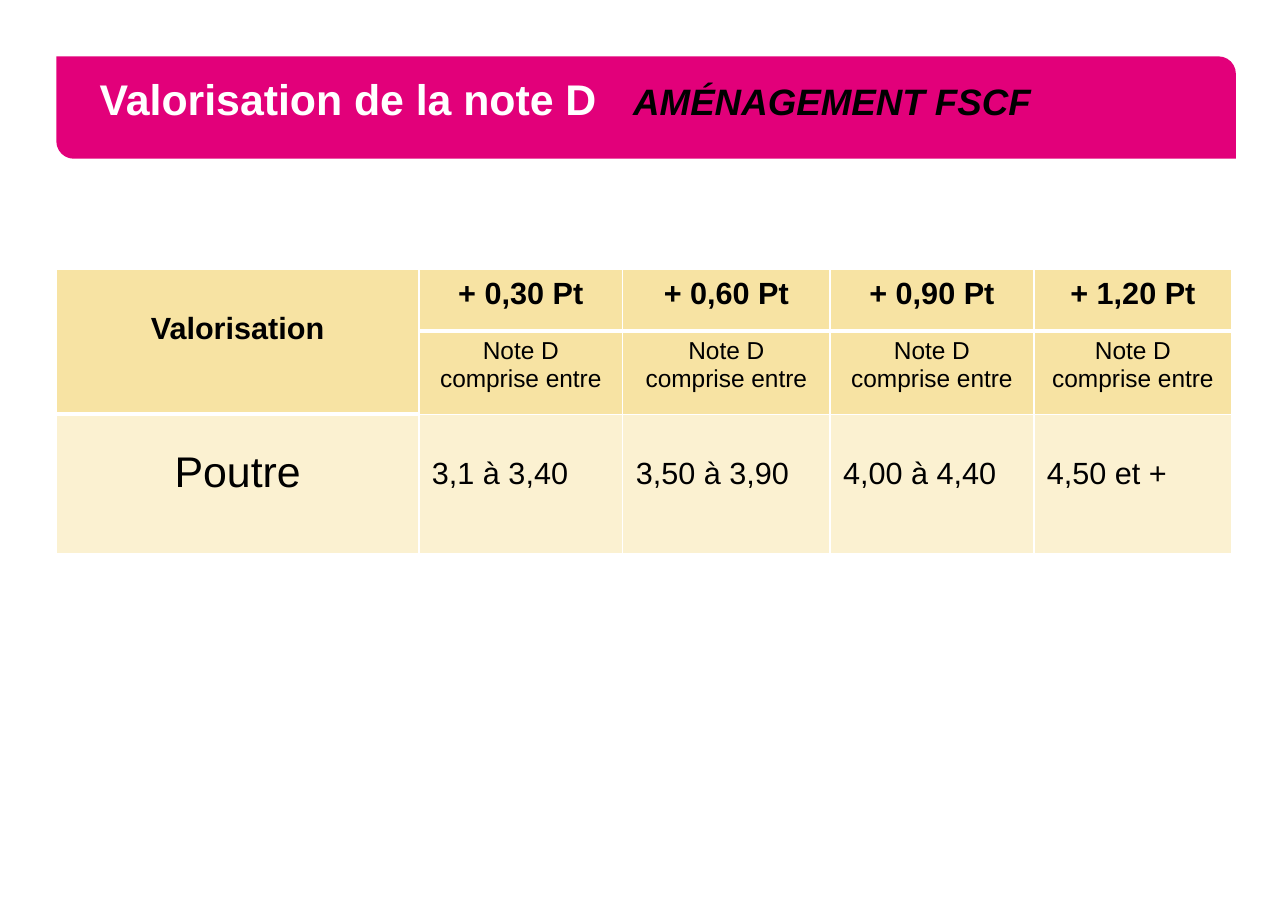
from dataclasses import dataclass

import lxml.etree
import pptx
import pptx.dml.color
import pptx.enum.shapes
import pptx.enum.text
import pptx.oxml.ns
import pptx.table
import pptx.util
from pptx.util import Cm, Pt

RGB = pptx.dml.color.RGBColor
ALIGN = pptx.enum.text.PP_ALIGN
ANCHOR = pptx.enum.text.MSO_ANCHOR
qn = pptx.oxml.ns.qn


@dataclass(frozen=True)
class Theme:
    font: str = "Arial"
    band: str = "E2007A"
    header: str = "F7E3A3"
    body: str = "FBF1D1"
    white: str = "FFFFFF"
    black: str = "000000"
    large: int = 28
    subtitle: int = 24
    normal: int = 20
    small: int = 16
    thin: int = 1
    thick: int = 3


@dataclass(frozen=True)
class CellStyle:
    fill: str
    size: int
    bold: bool = False
    align: ALIGN = ALIGN.CENTER
    top: float = 0.15


@dataclass(frozen=True)
class Bonus:
    points: str
    scores: str
    width: float


THEME = Theme()
LEFT, BAND_TOP, BAND_WIDTH, BAND_HEIGHT = Cm(1.3), Cm(1.3), Cm(27.2), Cm(2.36)
TABLE_TOP = Cm(6.22)
LABEL_WIDTH = 8.36
ROW_HEIGHTS = (1.42, 1.85, 3.22)
BONUSES = (
    Bonus("+ 0,30 Pt", "3,1 à 3,40", 4.7),
    Bonus("+ 0,60 Pt", "3,50 à 3,90", 4.78),
    Bonus("+ 0,90 Pt", "4,00 à 4,40", 4.7),
    Bonus("+ 1,20 Pt", "4,50 et +", 4.57),
)
HEADING = CellStyle(THEME.header, THEME.normal, bold=True)
SPANNING = CellStyle(THEME.header, THEME.normal, bold=True, top=0.97)
CONDITION = CellStyle(THEME.header, THEME.small)
APPARATUS = CellStyle(THEME.body, THEME.large, top=0.8)
SCORES = CellStyle(THEME.body, THEME.normal, align=ALIGN.LEFT, top=0.97)


def add_title(slide: pptx.slide.Slide) -> None:
    title = slide.shapes.title
    box = (LEFT, BAND_TOP, BAND_WIDTH, BAND_HEIGHT)
    band = slide.shapes.add_shape(
        pptx.enum.shapes.MSO_SHAPE.ROUND_2_DIAG_RECTANGLE, *box)
    band.adjustments[0], band.adjustments[1] = 0, 0.17
    band.shadow.inherit = False
    band.fill.solid()
    band.fill.fore_color.rgb = RGB.from_string(THEME.band)
    band.line.fill.background()
    title._element.addprevious(band._element)

    title.left, title.top, title.width, title.height = box
    tf = title.text_frame
    tf.word_wrap = True
    tf.auto_size = pptx.enum.text.MSO_AUTO_SIZE.NONE
    tf.vertical_anchor = ANCHOR.MIDDLE
    tf.margin_left = tf.margin_right = Cm(1)
    tf.margin_top = tf.margin_bottom = Cm(0.13)
    p = tf.paragraphs[0]
    p.alignment = ALIGN.LEFT
    p.line_spacing = Pt(22)
    tabs = lxml.etree.SubElement(p._p.get_or_add_pPr(), qn("a:tabLst"))
    lxml.etree.SubElement(tabs, qn("a:tab"), pos=str(Cm(12.3)), algn="l")
    for text, size, color, italic in (
        ("Valorisation de la note D\t", THEME.large, THEME.white, False),
        ("AMÉNAGEMENT FSCF", THEME.subtitle, THEME.black, True),
    ):
        r = p.add_run()
        r.text = text
        r.font.name = THEME.font
        r.font.size = Pt(size)
        r.font.bold = True
        r.font.italic = italic
        r.font.color.rgb = RGB.from_string(color)


def set_borders(cell: pptx.table._Cell, top: int, bottom: int) -> None:
    tc_pr = cell._tc.get_or_add_tcPr()
    widths = {"L": THEME.thin, "R": THEME.thin, "T": top, "B": bottom}
    for side, width in widths.items():
        ln = lxml.etree.SubElement(tc_pr, qn(f"a:ln{side}"), w=str(Pt(width)))
        fill = lxml.etree.SubElement(ln, qn("a:solidFill"))
        lxml.etree.SubElement(fill, qn("a:srgbClr"), val=THEME.white)


def fill_cell(cell: pptx.table._Cell, text: str, style: CellStyle) -> None:
    cell.fill.solid()
    cell.fill.fore_color.rgb = RGB.from_string(style.fill)
    cell.vertical_anchor = ANCHOR.TOP
    cell.margin_left = cell.margin_right = Cm(0.3)
    cell.margin_top, cell.margin_bottom = Cm(style.top), Cm(0.15)
    p = cell.text_frame.paragraphs[0]
    p.text = text
    p.alignment = style.align
    p.font.name = THEME.font
    p.font.size = Pt(style.size)
    p.font.bold = style.bold
    p.font.color.rgb = RGB.from_string(THEME.black)


def add_bonus_table(slide: pptx.slide.Slide) -> None:
    widths = (LABEL_WIDTH, *(bonus.width for bonus in BONUSES))
    table = slide.shapes.add_table(
        len(ROW_HEIGHTS), len(widths), LEFT, TABLE_TOP,
        Cm(sum(widths)), Cm(sum(ROW_HEIGHTS))).table
    table.first_row = table.horz_banding = False
    for column, width in zip(table.columns, widths):
        column.width = Cm(width)
    for row, height in zip(table.rows, ROW_HEIGHTS):
        row.height = Cm(height)

    for col in range(len(widths)):
        thick_row = 1 if col == 0 else 0
        for row in range(len(ROW_HEIGHTS)):
            set_borders(
                table.cell(row, col),
                top=THEME.thick if row == thick_row + 1 else THEME.thin,
                bottom=THEME.thick if row <= thick_row else THEME.thin)

    table.cell(0, 0).merge(table.cell(1, 0))
    fill_cell(table.cell(0, 0), "Valorisation", SPANNING)
    fill_cell(table.cell(2, 0), "Poutre", APPARATUS)
    for col, bonus in enumerate(BONUSES, start=1):
        fill_cell(table.cell(0, col), bonus.points, HEADING)
        fill_cell(table.cell(1, col), "Note D comprise entre", CONDITION)
        fill_cell(table.cell(2, col), bonus.scores, SCORES)


def main() -> None:
    prs = pptx.Presentation()
    prs.slide_width, prs.slide_height = Cm(29.7), Cm(21)
    slide = prs.slides.add_slide(prs.slide_layouts.get_by_name("Title Only"))
    add_title(slide)
    add_bonus_table(slide)
    prs.save("out.pptx")


if __name__ == "__main__":
    main()
